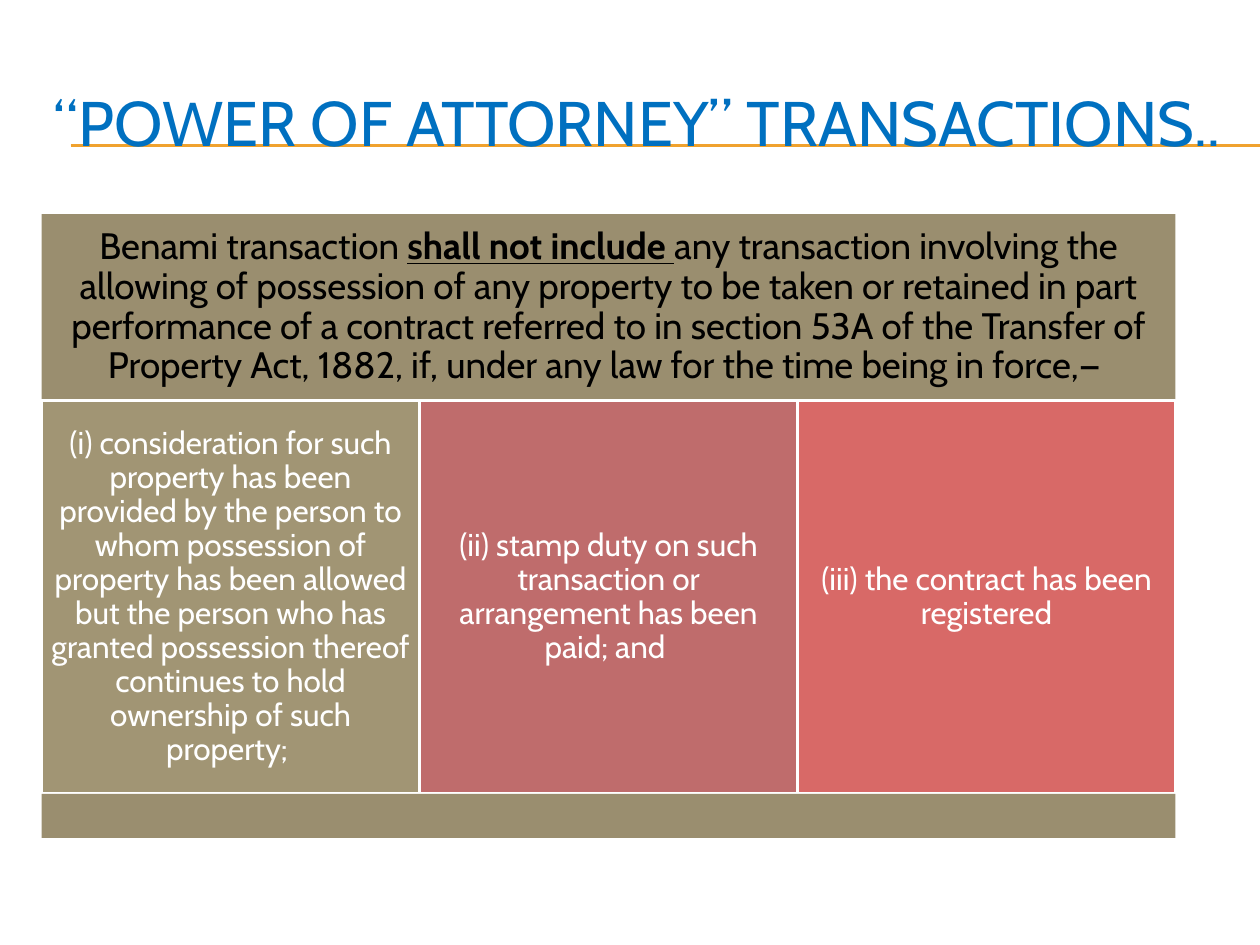
from lxml.etree import SubElement
from pptx import Presentation
from pptx.dml.color import RGBColor
from pptx.enum.shapes import MSO_CONNECTOR as Connector, MSO_SHAPE as Shape
from pptx.enum.text import MSO_ANCHOR as Anchor, PP_ALIGN as Align
from pptx.oxml.ns import qn
from pptx.util import Inches, Pt

FONT = "Cabin"
BLUE = RGBColor(0x00, 0x70, 0xC0)
ORANGE = RGBColor(0xF0, 0xA2, 0x2E)
OLIVE = RGBColor(0x9A, 0x8E, 0x6F)
SAND = RGBColor(0xA1, 0x95, 0x74)
ROSE = RGBColor(0xBF, 0x6C, 0x6C)
RED = RGBColor(0xD8, 0x69, 0x67)
BLACK = RGBColor(0x00, 0x00, 0x00)
WHITE = RGBColor(0xFF, 0xFF, 0xFF)

# Grid: one header row, three equal columns, one footer bar
LEFT, WIDTH = 0.33, 9
HEADER_TOP, COLUMNS_TOP, FOOTER_TOP, BOTTOM = 1.7, 3.18, 6.3, 6.65

HEADER = [
    ("Benami transaction ", False),
    ("shall not include ", True),
    ("any transaction involving the allowing of possession of any property to be "
     "taken or retained in part performance of a contract referred to in section "
     "53A of the Transfer of Property Act, 1882, if, under any law for the time "
     "being in force,— ", False),
]
CONDITIONS = [
    ("(i) consideration for such property has been provided by the person to whom "
     "possession of property has been allowed but the person who has granted "
     "possession thereof continues to hold ownership of such property; ", SAND),
    ("(ii) stamp duty on such transaction or arrangement has been paid; and ", ROSE),
    ("(iii) the contract has been registered", RED),
]


def add_rule(slide, y):
    line = slide.shapes.add_connector(
        Connector.STRAIGHT, Inches(0.56), Inches(y), Inches(10), Inches(y))
    line.line.color.rgb = ORANGE
    line.line.width = Pt(0.75)
    SubElement(line._element.spPr, qn("a:effectLst"))


def add_runs(paragraph, runs, size, color):
    for text, emphasis in runs:
        run = paragraph.add_run()
        run.text = text
        run.font.name = FONT
        run.font.size = Pt(size)
        run.font.color.rgb = color
        run.font.bold = run.font.underline = emphasis


def add_title(slide, text):
    box = slide.shapes.add_textbox(
        Inches(LEFT), Inches(0.5), Inches(9.5), Inches(0.92))
    frame = box.text_frame
    frame.word_wrap = True
    frame.vertical_anchor = Anchor.MIDDLE
    add_runs(frame.paragraphs[0], [(text, False)], 36, BLUE)


def add_block(slide, left, top, width, bottom, fill, outline=None):
    block = slide.shapes.add_shape(
        Shape.RECTANGLE, Inches(left), Inches(top), Inches(width), Inches(bottom - top))
    block.shadow.inherit = False
    block.fill.solid()
    block.fill.fore_color.rgb = fill
    if outline is None:
        block.line.fill.background()
    else:
        block.line.color.rgb = outline
        block.line.width = Pt(2)
    return block


def fill_text(block, runs, size, color, inset):
    frame = block.text_frame
    frame.word_wrap = True
    frame.vertical_anchor = Anchor.MIDDLE
    frame.margin_left = frame.margin_right = Inches(inset)
    frame.margin_top = frame.margin_bottom = Inches(inset)
    paragraph = frame.paragraphs[0]
    paragraph.alignment = Align.CENTER
    paragraph.line_spacing = 0.9
    add_runs(paragraph, runs, size, color)


def main():
    presentation = Presentation()
    presentation.slide_width = Inches(10)
    presentation.slide_height = Inches(7.5)
    slide = presentation.slides.add_slide(presentation.slide_layouts[6])

    # Title over a double rule
    for y in (1.15, 1.16):
        add_rule(slide, y)
    add_title(slide, "“POWER OF ATTORNEY” TRANSACTIONS..")

    # Header statement
    header = add_block(slide, LEFT, HEADER_TOP, WIDTH, COLUMNS_TOP, OLIVE)
    fill_text(header, HEADER, 21, BLACK, 0.09)

    # Three conditions
    column_width = WIDTH / len(CONDITIONS)
    for column, (text, fill) in enumerate(CONDITIONS):
        block = add_block(slide, LEFT + column * column_width, COLUMNS_TOP,
                          column_width, FOOTER_TOP, fill, WHITE)
        fill_text(block, [(text, False)], 18, WHITE, 0.07)

    # Footer bar
    add_block(slide, LEFT, FOOTER_TOP, WIDTH, BOTTOM, OLIVE)

    presentation.save("out.pptx")


if __name__ == "__main__":
    main()
